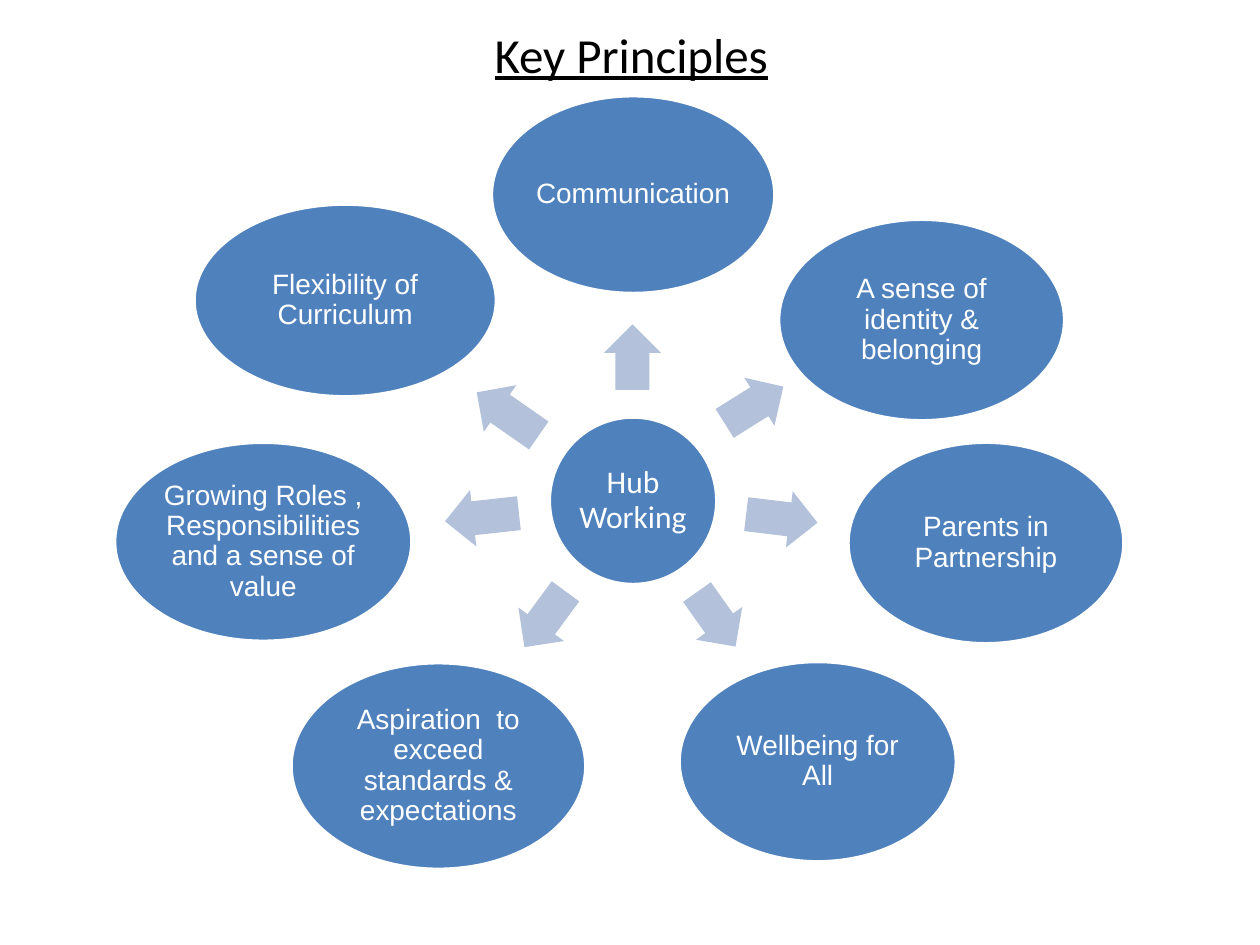
import math

import pptx
import pptx.dml.color
import pptx.enum.shapes
import pptx.enum.text
import pptx.util

Inches = pptx.util.Inches
SHAPES = pptx.enum.shapes.MSO_SHAPE

COLOURS = {
    "title": "000000",
    "oval": "4F81BD",
    "outline": "FFFFFF",
    "label": "FFFFFF",
    "arrow": "B3C1DB",
}

HUB_BOX = (4.36, 3.31, 1.33, 1.33)
ARROW_HEIGHT = 0.45

# Label, oval box, then left, top and length of the arrow before it is turned
PRINCIPLES = [
    ("Communication", (3.9, 0.76, 2.25, 1.57), (4.76, 2.61, 0.52)),
    ("A sense of identity & belonging", (6.18, 1.74, 2.27, 1.6), (5.71, 2.99, 0.55)),
    ("Parents in Partnership", (6.73, 3.51, 2.19, 1.6), (5.92, 3.89, 0.57)),
    ("Wellbeing for All", (5.39, 5.25, 2.2, 1.59), (5.42, 4.69, 0.53)),
    ("Aspiration  to exceed standards & expectations", (2.31, 5.26, 2.34, 1.64), (4.05, 4.69, 0.55)),
    ("Growing Roles , Responsibilities and a sense of value", (0.91, 3.51, 2.36, 1.58), (3.53, 3.88, 0.59)),
    ("Flexibility of Curriculum", (1.54, 1.62, 2.4, 1.53), (3.73, 3.06, 0.6)),
]


def colour(name):
    return pptx.dml.color.RGBColor.from_string(COLOURS[name])


def write(shape, text, *, size, font, fill, underline=None, spacing=None, inset=None):
    """Put centred text in a shape."""
    frame = shape.text_frame
    frame.word_wrap = True
    frame.vertical_anchor = pptx.enum.text.MSO_ANCHOR.MIDDLE
    if inset is not None:
        frame.margin_left = frame.margin_right = Inches(inset)
        frame.margin_top = frame.margin_bottom = Inches(inset)
    para = frame.paragraphs[0]
    para.alignment = pptx.enum.text.PP_ALIGN.CENTER
    para.line_spacing = spacing
    span = para.add_run()
    span.text = text
    span.font.size = pptx.util.Pt(size)
    span.font.name = font
    span.font.underline = underline
    span.font.color.rgb = colour(fill)


def add_filled(shapes, kind, box, fill):
    shape = shapes.add_shape(kind, *(Inches(length) for length in box))
    shape.shadow.inherit = False
    shape.fill.solid()
    shape.fill.fore_color.rgb = colour(fill)
    shape.line.fill.background()
    return shape


def add_oval(shapes, box, text, **text_format):
    oval = add_filled(shapes, SHAPES.OVAL, box, "oval")
    oval.line.color.rgb = colour("outline")
    oval.line.width = pptx.util.Pt(2)
    write(oval, text, fill="label", spacing=0.9, **text_format)


def centre(box):
    left, top, width, height = box
    return left + width / 2, top + height / 2


def add_arrow(shapes, box, start, target):
    """Add an arrow turned along the line from one box's centre to another's."""
    (start_x, start_y), (target_x, target_y) = centre(start), centre(target)
    arrow = add_filled(shapes, SHAPES.RIGHT_ARROW, box, "arrow")
    arrow.adjustments[0] = 0.6
    arrow.adjustments[1] = 0.5
    angle = math.degrees(math.atan2(target_y - start_y, target_x - start_x))
    arrow.rotation = round(angle, 1) % 360


def add_title(page, box):
    title = page.shapes.title
    title.left, title.top, title.width, title.height = (Inches(length) for length in box)
    write(title, "Key Principles", size=28, font="Calibri", fill="title", underline=True)


def add_radial_diagram(page, hub_box):
    shapes = page.shapes.add_group_shape().shapes
    add_oval(shapes, hub_box, "Hub Working", size=18, font="Calibri", inset=0.03)
    for text, oval_box, (left, top, length) in PRINCIPLES:
        add_arrow(shapes, (left, top, length, ARROW_HEIGHT), hub_box, oval_box)
        add_oval(shapes, oval_box, text, size=16, font="Arial", inset=0.02)


def main():
    deck = pptx.Presentation()
    deck.slide_width, deck.slide_height = Inches(10), Inches(7.5)
    page = deck.slides.add_slide(deck.slide_layouts.get_by_name("Title Only"))
    add_title(page, (0.51, 0, 9, 0.85))
    add_radial_diagram(page, HUB_BOX)
    deck.save("out.pptx")


if __name__ == "__main__":
    main()
